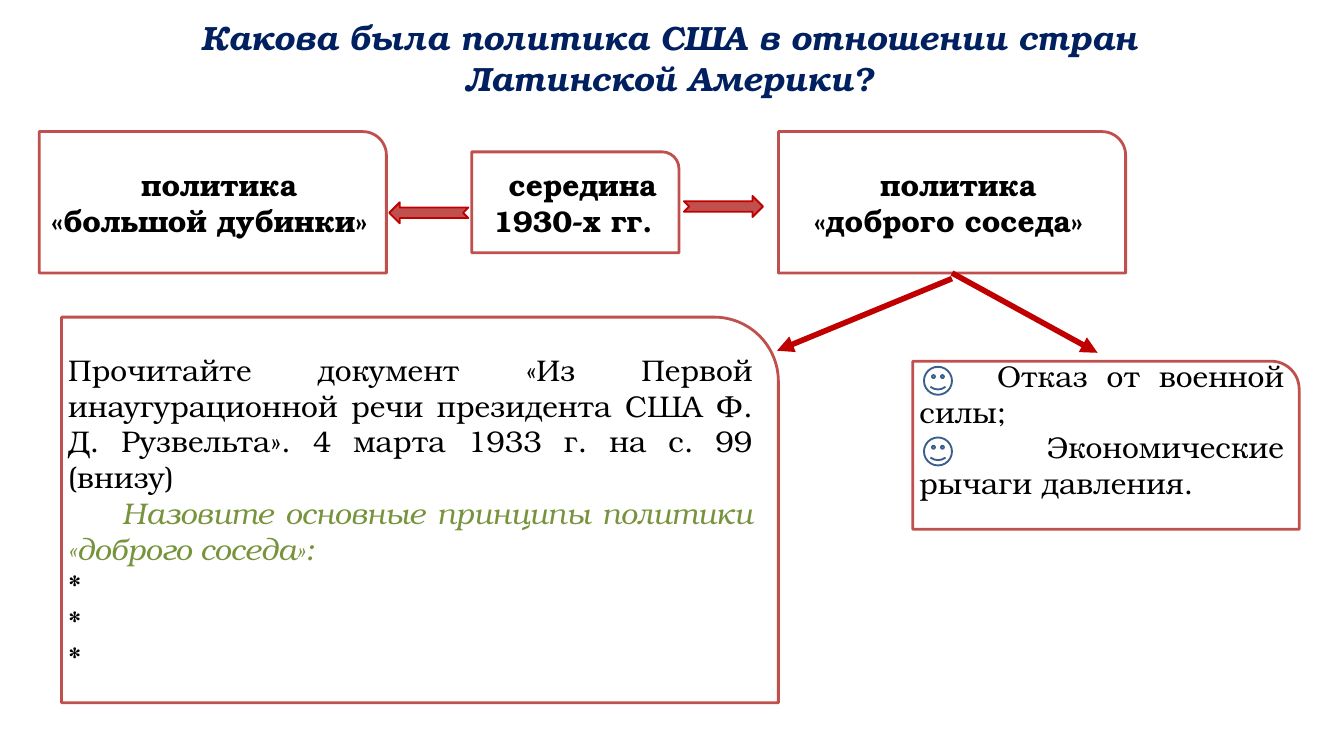
"""Builds a slide on United States policy towards Latin America."""
import dataclasses

import pptx
import pptx.dml.color
import pptx.enum.shapes
import pptx.enum.text
import pptx.oxml
import pptx.util

SHAPES = pptx.enum.shapes.MSO_SHAPE
ALIGN = pptx.enum.text.PP_ALIGN
ANCHOR = pptx.enum.text.MSO_ANCHOR
EMU_PER_PX = 9525


@dataclasses.dataclass(frozen=True)
class Theme:
    font: str = "TeX Gyre Bonum"
    title_size: int = 36
    body_size: int = 32
    title: str = "002060"
    text: str = "000000"
    task: str = "77933C"
    paper: str = "FFFFFF"
    frame: str = "C0504D"
    arrow: str = "C00000"
    smiley: str = "3A5F8C"


THEME = Theme()

TITLE = ["Какова была политика США в отношении стран", "Латинской Америки?"]
TITLE_BOX = (152, 20, 1608, 126)

LABEL_INDENT = 28
LABELS = {
    "big stick": ((56, 188, 496, 202), ["политика\v«большой дубинки»"]),
    "good neighbour": ((1112, 188, 496, 202), ["политика\v«доброго соседа»"]),
    "date": ((674, 217, 296, 144), ["середина", "1930-х гг."]),
}

BLOCK_ARROWS = [((977, 280, 113, 30), 0), ((556, 289, 113, 30), 180)]

PRINCIPLES_BOX = (1304, 516, 552, 240)
PRINCIPLES = [("Отказ от военной силы;", 111), ("Экономические рычаги давления.", 182)]
SMILEY_LEFT, SMILEY_TOP, SMILEY_SIZE, SMILEY_STEP = 1320, 524, 40, 101

TASK_BOX = (88, 453, 1024, 551)
DOCUMENT = (
    "Прочитайте документ «Из Первой инаугурационной речи президента США "
    "Ф. Д. Рузвельта». 4 марта 1933 г. на с. 99 (внизу)"
)
QUESTION = "Назовите основные принципы политики «доброго соседа»:"
QUESTION_INDENT = 77
ANSWER_COUNT = 3

POINTERS = [
    ((1360, 398), (1110, 501), None),
    ((1360, 390), (1568, 504), "good neighbour"),
]


def px(value):
    return pptx.util.Emu(value * EMU_PER_PX)


def rgb(value):
    return pptx.dml.color.RGBColor.from_string(value)


def write(paragraph, text, align, color=THEME.text, size=THEME.body_size,
          bold=False, italic=False, indent=0):
    paragraph.text = text
    paragraph.alignment = align
    if indent:
        properties = paragraph._p.get_or_add_pPr()
        properties.set("marL", "0")
        properties.set("indent", str(px(indent)))
    for run in paragraph.runs:
        run.font.name = THEME.font
        run.font.size = pptx.util.Pt(size)
        run.font.bold = bold
        run.font.italic = italic
        run.font.color.rgb = rgb(color)


def paragraphs(text_frame, count):
    for _ in range(count - 1):
        text_frame.add_paragraph()
    return text_frame.paragraphs


def add_shape(slide, kind, box, fill, line, width):
    shape = slide.shapes.add_shape(kind, *map(px, box))
    shape.shadow.inherit = False
    if fill:
        shape.fill.solid()
        shape.fill.fore_color.rgb = rgb(fill)
    else:
        shape.fill.background()
    shape.line.color.rgb = rgb(line)
    shape.line.width = pptx.util.Pt(width)
    return shape


def add_frame(slide, box, anchor=ANCHOR.MIDDLE):
    shape = add_shape(slide, SHAPES.ROUND_1_RECTANGLE, box, THEME.paper, THEME.frame, 3)
    shape.text_frame.word_wrap = True
    shape.text_frame.vertical_anchor = anchor
    return shape


def add_title(slide):
    text_frame = slide.shapes.add_textbox(*map(px, TITLE_BOX)).text_frame
    text_frame.word_wrap = True
    for paragraph, text in zip(paragraphs(text_frame, len(TITLE)), TITLE):
        write(paragraph, text, ALIGN.CENTER, THEME.title, THEME.title_size, True, True)


def add_label(slide, box, lines):
    shape = add_frame(slide, box)
    for index, paragraph in enumerate(paragraphs(shape.text_frame, len(lines))):
        indent = 0 if index else LABEL_INDENT
        write(paragraph, lines[index], ALIGN.CENTER, bold=True, indent=indent)
    return shape


def add_principles(slide):
    text_frame = add_frame(slide, PRINCIPLES_BOX).text_frame
    text_frame.margin_top, text_frame.margin_bottom = 0, px(46)
    rows = paragraphs(text_frame, len(PRINCIPLES))
    for index, (text, indent) in enumerate(PRINCIPLES):
        write(rows[index], text, ALIGN.JUSTIFY, indent=indent)
        top = SMILEY_TOP + index * SMILEY_STEP
        add_shape(slide, SHAPES.SMILEY_FACE, (SMILEY_LEFT, top, SMILEY_SIZE, SMILEY_SIZE),
                  None, THEME.smiley, 2)


def add_task(slide):
    text_frame = add_frame(slide, TASK_BOX, ANCHOR.TOP).text_frame
    text_frame.margin_top = px(49)
    document, question, *answers = paragraphs(text_frame, 2 + ANSWER_COUNT)
    write(document, DOCUMENT, ALIGN.JUSTIFY)
    write(question, QUESTION, ALIGN.JUSTIFY, THEME.task, italic=True, indent=QUESTION_INDENT)
    for answer in answers:
        write(answer, "*", ALIGN.JUSTIFY)


def add_pointer(slide, start, end, source):
    connector = slide.shapes.add_connector(
        pptx.enum.shapes.MSO_CONNECTOR.STRAIGHT, *map(px, start + end))
    if source is not None:
        connector.begin_connect(source, 2)
    connector.line.color.rgb = rgb(THEME.arrow)
    connector.line.width = pptx.util.Pt(6)
    head = pptx.oxml.parse_xml(
        '<a:tailEnd xmlns:a="http://schemas.openxmlformats.org/drawingml/2006/main" '
        'type="triangle"/>')
    connector.line._get_or_add_ln().append(head)
    effects = pptx.oxml.parse_xml(
        '<a:effectLst xmlns:a="http://schemas.openxmlformats.org/drawingml/2006/main"/>')
    connector._element.spPr.append(effects)


def main():
    presentation = pptx.Presentation()
    presentation.slide_width, presentation.slide_height = px(1920), px(1080)
    slide = presentation.slides.add_slide(presentation.slide_layouts[6])
    add_title(slide)
    labels = {name: add_label(slide, box, lines) for name, (box, lines) in LABELS.items()}
    for box, rotation in BLOCK_ARROWS:
        arrow = add_shape(slide, SHAPES.NOTCHED_RIGHT_ARROW, box, THEME.frame, THEME.arrow, 2)
        arrow.rotation = rotation
    add_principles(slide)
    add_task(slide)
    for start, end, source in POINTERS:
        add_pointer(slide, start, end, labels.get(source))
    presentation.save("out.pptx")


if __name__ == "__main__":
    main()
